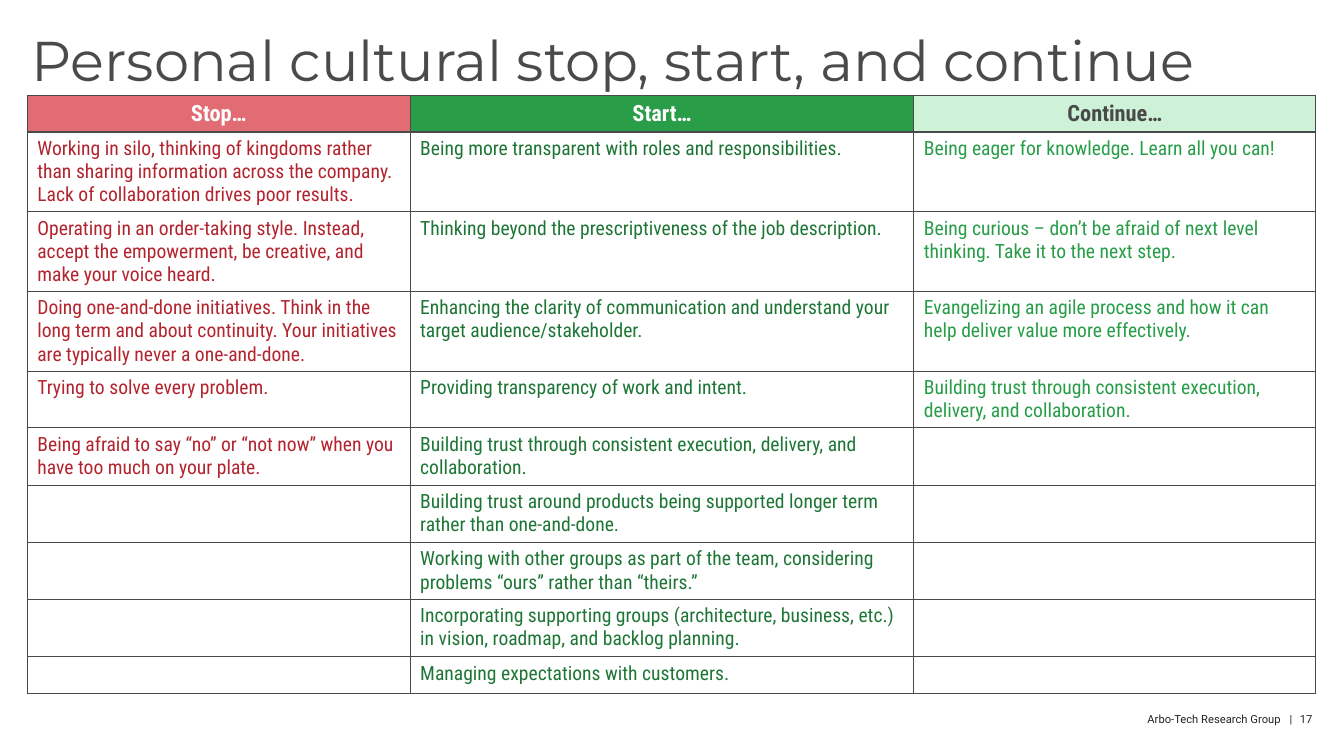
from lxml import etree
from pptx import Presentation
from pptx.dml.color import RGBColor
from pptx.enum.text import MSO_ANCHOR as Anchor, MSO_AUTO_SIZE as AutoSize, PP_ALIGN as Align
from pptx.oxml.ns import qn
from pptx.util import Pt

WHITE = RGBColor(0xFF, 0xFF, 0xFF)
TITLE_GREY = RGBColor(0x4A, 0x4A, 0x4A)
GRID_GREY = RGBColor(0x49, 0x49, 0x49)
FOOTER_GREY = RGBColor(0x24, 0x24, 0x24)
CORAL = RGBColor(0xE1, 0x6C, 0x74)
RED = RGBColor(0xB3, 0x24, 0x2E)
GREEN = RGBColor(0x29, 0x9D, 0x47)
DARK_GREEN = RGBColor(0x1E, 0x76, 0x36)
LIGHT_GREEN = RGBColor(0x28, 0x9D, 0x48)
MINT = RGBColor(0xCD, 0xF2, 0xD7)

BODY_SIZE = 14
ROW_HEIGHTS = [25.5, 57, 57, 57, 40.5, 41, 41, 40.5, 41, 26.5]

# heading, width, heading fill, heading colour, body colour, entries
COLUMNS = [
    ("Stop…", 273.6, CORAL, WHITE, RED, [
        "Working in silo, thinking of kingdoms rather than sharing information across "
        "the company. Lack of collaboration drives poor results.",
        "Operating in an order-taking style. Instead, accept the empowerment, be creative, "
        "and make your voice heard.",
        "Doing one-and-done initiatives. Think in the long term and about continuity. "
        "Your initiatives are typically never a one-and-done.",
        "Trying to solve every problem.",
        "Being afraid to say “no” or “not now” when you have too much on your plate.",
    ]),
    ("Start…", 360, GREEN, WHITE, DARK_GREEN, [
        "Being more transparent with roles and responsibilities.",
        "Thinking beyond the prescriptiveness of the job description.",
        "Enhancing the clarity of communication and understand your target audience/stakeholder.",
        "Providing transparency of work and intent.",
        "Building trust through consistent execution, delivery, and collaboration.",
        "Building trust around products being supported longer term rather than one-and-done.",
        "Working with other groups as part of the team, considering problems “ours” "
        "rather than “theirs.”",
        "Incorporating supporting groups (architecture, business, etc.) in vision, roadmap, "
        "and backlog planning.",
        "Managing expectations with customers.",
    ]),
    ("Continue…", 287.3, MINT, GRID_GREY, LIGHT_GREEN, [
        "Being eager for knowledge. Learn all you can!",
        "Being curious – don’t be afraid of next level thinking. Take it to the next step.",
        "Evangelizing an agile process and how it can help deliver value more effectively.",
        "Building trust through consistent execution, delivery, and collaboration.",
    ]),
]


def style(p, font, size, color, bold=False):
    for r in p.runs:
        r.font.name, r.font.size, r.font.bold = font, Pt(size), bold
        r.font.color.rgb = color


def place(sp, x, y, w, h):
    sp.left, sp.top, sp.width, sp.height = Pt(x), Pt(y), Pt(w), Pt(h)


def clear_margins(tf):
    tf.margin_left = tf.margin_top = tf.margin_right = tf.margin_bottom = 0


def add_title(slide, x, y, w, h):
    sp = slide.shapes.title
    place(sp, x, y, w, h)
    tf = sp.text_frame
    tf.text = "Personal cultural stop, start, and continue"
    clear_margins(tf)
    tf.word_wrap, tf.auto_size, tf.vertical_anchor = True, AutoSize.NONE, Anchor.TOP
    p = tf.paragraphs[0]
    p.alignment, p.line_spacing = Align.LEFT, 0.9
    style(p, "Montserrat", 40, TITLE_GREY)


def set_borders(cell):
    tcPr = cell._tc.get_or_add_tcPr()
    for i, side in enumerate(("lnL", "lnR", "lnT", "lnB")):
        ln = etree.Element(qn(f"a:{side}"), w=str(Pt(1)))
        fill = etree.SubElement(ln, qn("a:solidFill"))
        etree.SubElement(fill, qn("a:srgbClr"), val=str(GRID_GREY))
        tcPr.insert(i, ln)


def fill_cell(cell, text, fill, color, heading=False):
    cell.fill.solid()
    cell.fill.fore_color.rgb = fill
    set_borders(cell)
    p = cell.text_frame.paragraphs[0]
    if not text:
        # Keeps an empty cell from stretching its row
        etree.SubElement(p._p, qn("a:endParaRPr"), sz=str(BODY_SIZE * 100))
        return
    p.text = text
    if heading:
        cell.vertical_anchor, p.alignment = Anchor.MIDDLE, Align.CENTER
    style(p, "Roboto Condensed", 16 if heading else BODY_SIZE, color, heading)


def add_habits_table(slide, x, y, w, h):
    table = slide.shapes.add_table(
        len(ROW_HEIGHTS), len(COLUMNS), Pt(x), Pt(y), Pt(w), Pt(h)).table
    for row, height in zip(table.rows, ROW_HEIGHTS):
        row.height = Pt(height)
    for c, (heading, width, fill, head_color, color, entries) in enumerate(COLUMNS):
        table.columns[c].width = Pt(width)
        fill_cell(table.cell(0, c), heading, fill, head_color, heading=True)
        for r in range(1, len(ROW_HEIGHTS)):
            text = entries[r - 1] if r <= len(entries) else ""
            fill_cell(table.cell(r, c), text, WHITE, color)


def add_footer(slide, x, y, w, h):
    tf = slide.shapes.add_textbox(Pt(x), Pt(y), Pt(w), Pt(h)).text_frame
    clear_margins(tf)
    tf.word_wrap = True
    p = tf.paragraphs[0]
    p.text = "\tArbo-Tech Research Group\t|\t17"
    p.alignment = Align.LEFT
    # Tab stops measured back from the right edge: name, bar, page number
    tabs = etree.SubElement(p._p.get_or_add_pPr(), qn("a:tabLst"))
    for back, kind in ((23, "r"), (16, "ctr"), (0.5, "r")):
        etree.SubElement(tabs, qn("a:tab"), pos=str(Pt(w - back)), algn=kind)
    style(p, "Roboto", 8, FOOTER_GREY)


def main():
    prs = Presentation()
    prs.slide_width, prs.slide_height = Pt(960.5), Pt(540)
    slide = prs.slides.add_slide(prs.slide_layouts[5])
    add_title(slide, 22.3, 23.8, 907, 89)
    add_habits_table(slide, 19.5, 68.4, sum(col[1] for col in COLUMNS), sum(ROW_HEIGHTS))
    add_footer(slide, 693, 508.5, 245.5, 10)
    prs.save("out.pptx")


if __name__ == "__main__":
    main()
